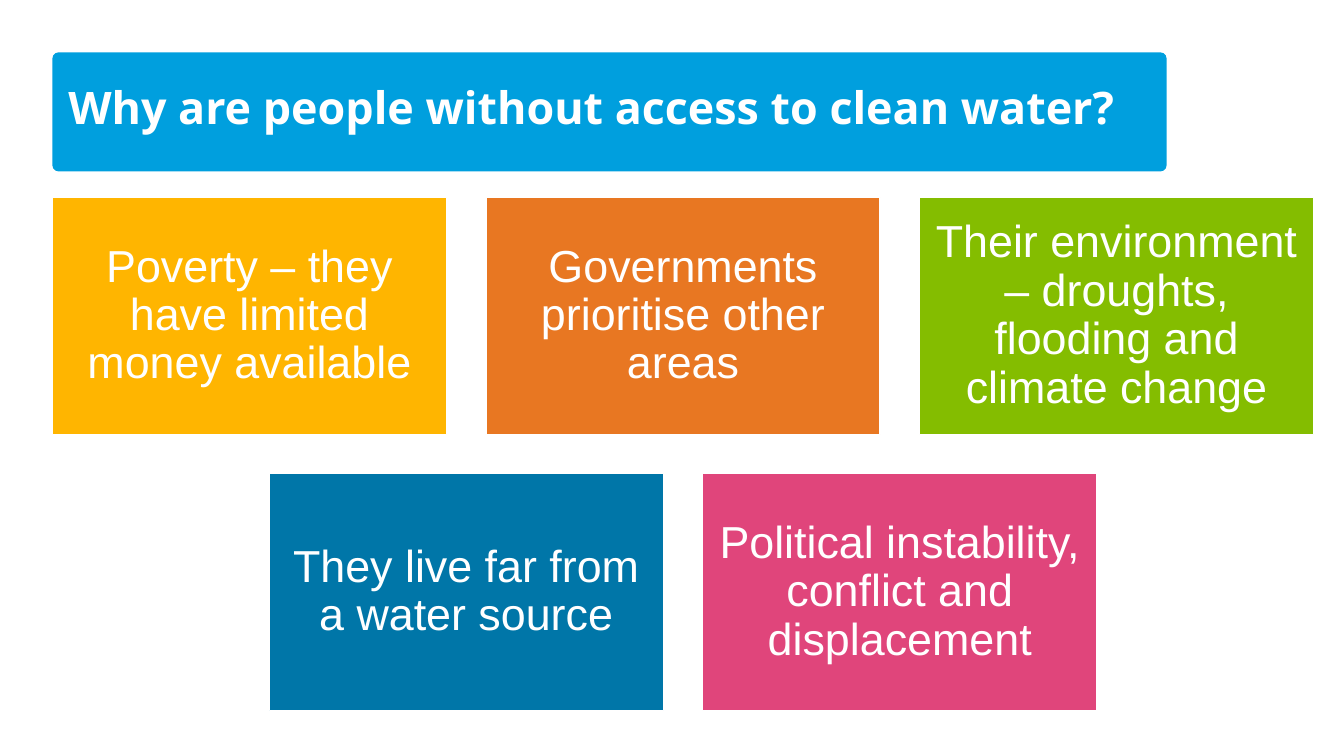
from pptx import Presentation
from pptx.dml.color import RGBColor
from pptx.enum.shapes import MSO_SHAPE
from pptx.enum.text import MSO_ANCHOR, PP_ALIGN
from pptx.util import Inches, Pt


def tint(code):
    return RGBColor.from_string(code)


class Deck:
    """Holds the style, the grid and the current slide."""

    left, top = 0.52, 1.96
    wide, high = 3.91, 2.35
    step, drop = 4.3, 2.74
    white, size = "FFFFFF", 32

    def __init__(self):
        self.show = Presentation()
        self.show.slide_width = Inches(13.33)
        self.show.slide_height = Inches(7.5)
        self.slide = self.show.slides.add_slide(self.show.slide_layouts[6])

    def block(self, kind, box, fill, pads):
        shape = self.slide.shapes.add_shape(kind, *map(Inches, box))
        shape.shadow.inherit = False
        shape.fill.solid()
        shape.fill.fore_color.rgb = tint(fill)
        frame = shape.text_frame
        frame.word_wrap = True
        frame.vertical_anchor = MSO_ANCHOR.MIDDLE
        frame.margin_left, frame.margin_top, frame.margin_right, frame.margin_bottom = map(Inches, pads)
        return shape

    def label(self, shape, text, face, align, bold=False):
        para = shape.text_frame.paragraphs[0]
        para.alignment = align
        para.line_spacing = 0.9
        run = para.add_run()
        run.text = text
        run.font.name = face
        run.font.size = Pt(self.size)
        run.font.bold = bold
        run.font.color.rgb = tint(self.white)

    def title(self, text, fill):
        box = (self.left, 0.52, 11.05, 1.18)
        shape = self.block(MSO_SHAPE.ROUNDED_RECTANGLE, box, fill, (0.14, 0, 0, 0.03))
        shape.adjustments[0] = 0.05
        shape.line.fill.background()
        self.label(shape, text, "Noto Sans", PP_ALIGN.LEFT, True)

    def card(self, col, row, text, fill):
        box = (self.left + col * self.step, self.top + row * self.drop, self.wide, self.high)
        shape = self.block(MSO_SHAPE.RECTANGLE, box, fill, [0.13] * 4)
        shape.line.color.rgb = tint(self.white)
        shape.line.width = Pt(1)
        self.label(shape, text, "Arial", PP_ALIGN.CENTER)


def main():
    deck = Deck()
    deck.title("Why are people without access to clean water?", "009FDE")
    cards = [
        (0, 0, "Poverty – they have limited money available", "FFB500"),
        (1, 0, "Governments prioritise other areas", "E87722"),
        (2, 0, "Their environment – droughts, flooding and climate change", "84BD00"),
        (0.5, 1, "They live far from a water source", "0076A8"),
        (1.5, 1, "Political instability, conflict and displacement", "E0457B"),
    ]
    for card in cards:
        deck.card(*card)
    deck.show.save("out.pptx")


if __name__ == "__main__":
    main()
